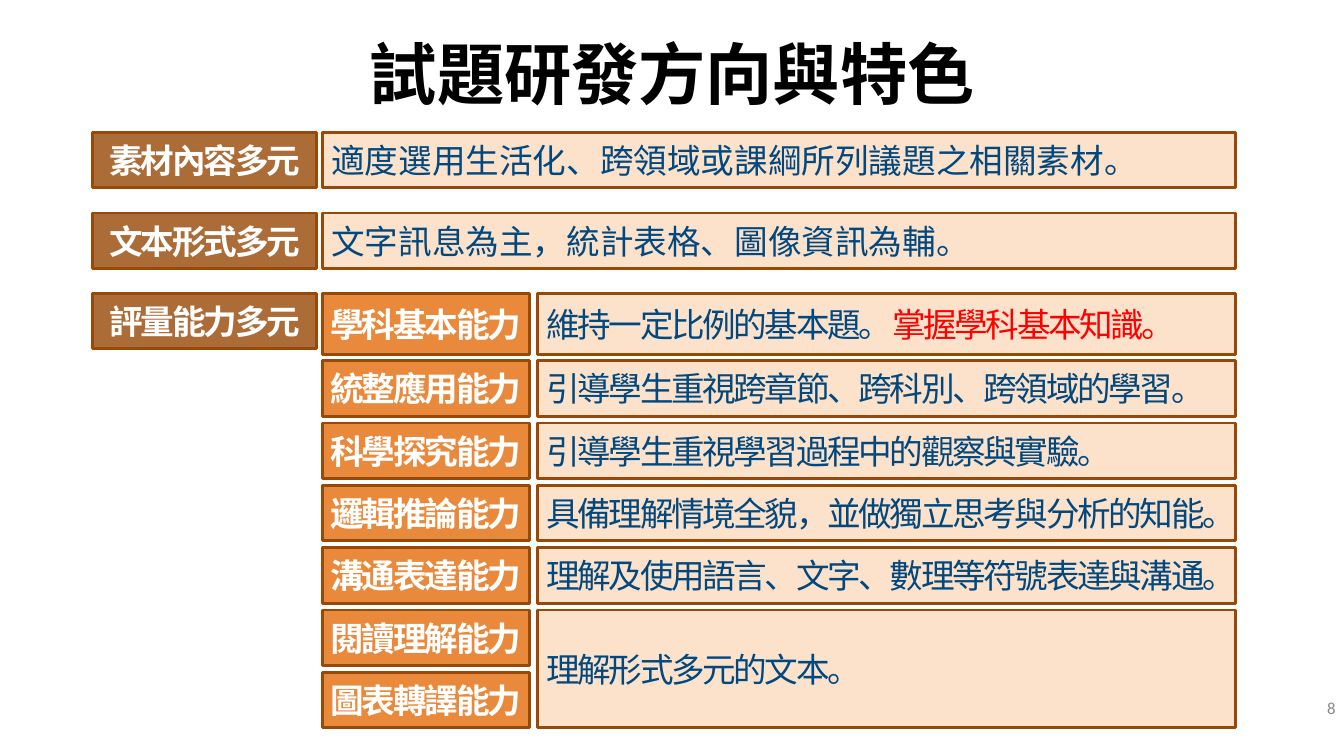
from dataclasses import dataclass

from lxml.etree import SubElement
from pptx import Presentation
from pptx.dml.color import RGBColor
from pptx.enum.shapes import MSO_SHAPE
from pptx.enum.text import MSO_ANCHOR, MSO_AUTO_SIZE, PP_ALIGN
from pptx.oxml.ns import qn
from pptx.util import Cm, Pt


@dataclass(frozen=True)
class Theme:
    title_font: str = "Noto Sans CJK SC"
    body_font: str = "Noto Sans CJK SC"
    number_font: str = "Calibri"
    title_size: int = 48
    body_size: int = 24
    number_size: int = 12
    black: str = "000000"
    white: str = "FFFFFF"
    gray: str = "898989"
    brown: str = "984807"
    orange: str = "E46C0A"
    peach: str = "FCD5B5"
    navy: str = "00487E"
    red: str = "FF0000"
    label_opacity: int = 80
    detail_opacity: int = 70
    label_spacing: float = -1.5
    tight_spacing: float = -1.7


THEME = Theme()

TOPICS = [
    ("素材內容多元", "適度選用生活化、跨領域或課綱所列議題之相關素材。"),
    ("文本形式多元", "文字訊息為主，統計表格、圖像資訊為輔。"),
]
ABILITY_TOPIC = "評量能力多元"
BASIC_ABILITY = ("學科基本能力", "維持一定比例的基本題。", "掌握學科基本知識。")
# Each group lists the abilities that share one description.
ABILITY_GROUPS = [
    (["統整應用能力"], "引導學生重視跨章節、跨科別、跨領域的學習。"),
    (["科學探究能力"], "引導學生重視學習過程中的觀察與實驗。"),
    (["邏輯推論能力"], "具備理解情境全貌，並做獨立思考與分析的知能。"),
    (["溝通表達能力"], "理解及使用語言、文字、數理等符號表達與溝通。"),
    (["閱讀理解能力", "圖表轉譯能力"], "理解形式多元的文本。"),
]

ROW_HEIGHT = 1.4
TOPIC_PITCH = 2.04
TOPIC_WIDTH = 5.64
TOPIC_STEP = 5.78
BASIC_HEIGHT = 1.55
BASIC_STEP = 1.7
ABILITY_PITCH = 1.57
ABILITY_WIDTH = 5.23
ABILITY_STEP = 5.42


def format_paragraph(paragraph, name, size, color, bold=False, spacing=0):
    """Set the paragraph font, its East Asian face and letter spacing in points."""
    font = paragraph.font
    font.name = name
    font.size = Pt(size)
    font.bold = bold
    font.color.rgb = RGBColor.from_string(color)
    properties = paragraph._p.pPr.find(qn("a:defRPr"))
    SubElement(properties, qn("a:ea"), typeface=name)
    if spacing:
        properties.set("spc", str(round(spacing * 100)))


def add_box(slide, left, top, width, height, fill, opacity):
    """Add a translucent bordered rectangle, in centimetres, and return it."""
    shape = slide.shapes.add_shape(
        MSO_SHAPE.RECTANGLE, Cm(left), Cm(top), Cm(width), Cm(height))
    shape.shadow.inherit = False
    shape.fill.solid()
    shape.fill.fore_color.rgb = RGBColor.from_string(fill)
    color = shape.fill._xPr.find(qn("a:solidFill"))[0]
    SubElement(color, qn("a:alpha"), val=str(opacity * 1000))
    shape.line.color.rgb = RGBColor.from_string(THEME.brown)
    shape.line.width = Pt(2)
    frame = shape.text_frame
    frame.word_wrap = True
    frame.vertical_anchor = MSO_ANCHOR.MIDDLE
    frame.margin_left = frame.margin_right = 0
    return shape


def add_label(slide, left, top, width, height, text, fill):
    shape = add_box(slide, left, top, width, height, fill, THEME.label_opacity)
    paragraph = shape.text_frame.paragraphs[0]
    paragraph.text = text
    paragraph.alignment = PP_ALIGN.CENTER
    format_paragraph(paragraph, THEME.body_font, THEME.body_size, THEME.white,
                     True, THEME.label_spacing)


def add_detail(slide, left, top, width, height, text, emphasis="", spacing=0):
    shape = add_box(slide, left, top, width, height, THEME.peach, THEME.detail_opacity)
    shape.text_frame.margin_left = Cm(0.23)
    paragraph = shape.text_frame.paragraphs[0]
    paragraph.alignment = PP_ALIGN.LEFT
    paragraph.add_run().text = text
    format_paragraph(paragraph, THEME.body_font, THEME.body_size, THEME.navy,
                     spacing=spacing)
    if emphasis:
        run = paragraph.add_run()
        run.text = emphasis
        run.font.color.rgb = RGBColor.from_string(THEME.red)


def add_title(slide, left, top, width, height):
    title = slide.shapes.title
    title.left, title.top, title.width, title.height = map(Cm, (left, top, width, height))
    frame = title.text_frame
    frame.auto_size = MSO_AUTO_SIZE.NONE
    frame.vertical_anchor = MSO_ANCHOR.MIDDLE
    paragraph = frame.paragraphs[0]
    paragraph.text = "試題研發方向與特色"
    paragraph.alignment = PP_ALIGN.CENTER
    format_paragraph(paragraph, THEME.title_font, THEME.title_size, THEME.black, True)


def add_topics(slide, left, top, width):
    for index, (topic, detail) in enumerate(TOPICS):
        row_top = top + index * TOPIC_PITCH
        add_label(slide, left, row_top, TOPIC_WIDTH, ROW_HEIGHT, topic, THEME.brown)
        add_detail(slide, left + TOPIC_STEP, row_top, width - TOPIC_STEP,
                   ROW_HEIGHT, detail)


def add_abilities(slide, left, top, width):
    """Add the ability topic, then its abilities beside their descriptions."""
    add_label(slide, left, top, TOPIC_WIDTH, ROW_HEIGHT, ABILITY_TOPIC, THEME.brown)
    ability_left = left + TOPIC_STEP
    detail_left = ability_left + ABILITY_STEP
    detail_width = left + width - detail_left
    name, detail, emphasis = BASIC_ABILITY
    add_label(slide, ability_left, top, ABILITY_WIDTH, BASIC_HEIGHT, name, THEME.orange)
    add_detail(slide, detail_left, top, detail_width, BASIC_HEIGHT, detail, emphasis,
               THEME.tight_spacing)
    row_top = top + BASIC_STEP
    for names, detail in ABILITY_GROUPS:
        group_height = (len(names) - 1) * ABILITY_PITCH + ROW_HEIGHT
        add_detail(slide, detail_left, row_top, detail_width, group_height, detail,
                   spacing=THEME.tight_spacing)
        for name in names:
            add_label(slide, ability_left, row_top, ABILITY_WIDTH, ROW_HEIGHT, name,
                      THEME.orange)
            row_top += ABILITY_PITCH


def add_page_number(slide, left, top, width, height):
    box = slide.shapes.add_textbox(Cm(left), Cm(top), Cm(width), Cm(height))
    frame = box.text_frame
    frame.word_wrap = True
    frame.vertical_anchor = MSO_ANCHOR.MIDDLE
    paragraph = frame.paragraphs[0]
    paragraph.text = "8"
    paragraph.alignment = PP_ALIGN.RIGHT
    format_paragraph(paragraph, THEME.number_font, THEME.number_size, THEME.gray)


def main():
    presentation = Presentation()
    presentation.slide_width = Cm(33.87)
    presentation.slide_height = Cm(19.05)
    slide = presentation.slides.add_slide(presentation.slide_layouts.get_by_name("Title Only"))
    add_title(slide, 5.51, 0.76, 22.86, 2.16)
    add_topics(slide, 2.34, 3.33, 28.8)
    add_abilities(slide, 2.34, 7.39, 28.8)
    add_page_number(slide, 26.01, 17.32, 7.9, 1.02)
    presentation.save("out.pptx")


if __name__ == "__main__":
    main()
